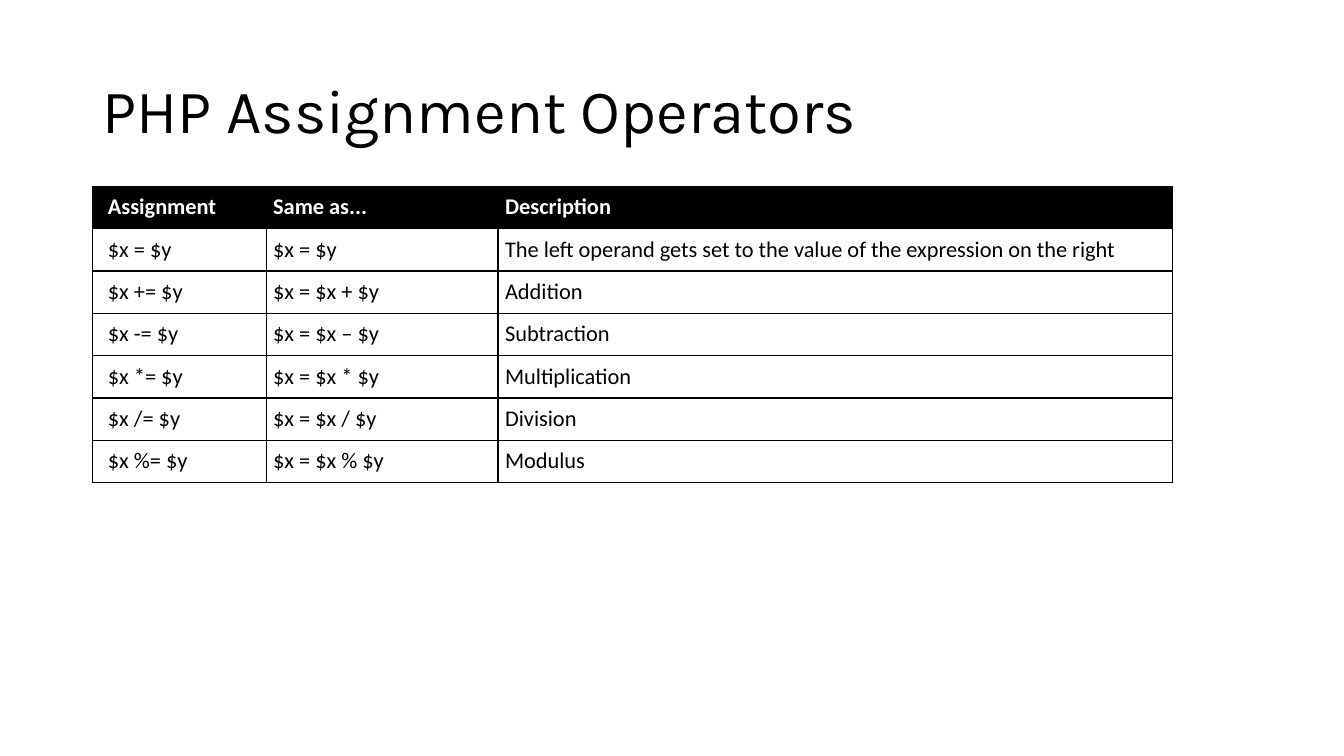
from dataclasses import dataclass

from lxml import etree
from pptx import Presentation
from pptx.dml.color import RGBColor
from pptx.enum import text
from pptx.oxml import ns
from pptx.util import Inches, Pt


@dataclass(frozen=True)
class Theme:
    """Colours, fonts and sizes of the slide."""
    black: str = "000000"
    white: str = "FFFFFF"
    title_font: str = "Karla"
    body_font: str = "Calibri"
    title_size: int = 44
    body_size: int = 16
    border: int = 1


THEME = Theme()
COLUMNS = (1.72, 2.3, 6.69)
OPERATORS = (
    ("Assignment", "Same as...", "Description"),
    ("$x = $y", "$x = $y", "The left operand gets set to the value of the expression on the right"),
    ("$x += $y", "$x = $x + $y", "Addition"),
    ("$x -= $y", "$x = $x – $y", "Subtraction"),
    ("$x *= $y", "$x = $x * $y", "Multiplication"),
    ("$x /= $y", "$x = $x / $y", "Division"),
    ("$x %= $y", "$x = $x % $y", "Modulus"),
)


def set_all(target, values):
    """Set each named attribute on the target."""
    for name, value in values.items():
        setattr(target, name, value)


def write(p, words, color, **font):
    """Add a formatted run to a paragraph."""
    r = p.add_run()
    r.text = words
    set_all(r.font, font)
    r.font.color.rgb = RGBColor.from_string(color)


def add_borders(cell):
    """Draw a thin line on all four sides of a cell."""
    props = cell._tc.get_or_add_tcPr()
    for i, side in enumerate(("lnL", "lnR", "lnT", "lnB")):
        line = etree.Element(ns.qn(f"a:{side}"), w=str(Pt(THEME.border)))
        fill = etree.SubElement(line, ns.qn("a:solidFill"))
        etree.SubElement(fill, ns.qn("a:srgbClr"), val=THEME.black)
        props.insert(i, line)


def add_title(s, words, left, top, width, height):
    """Place the slide title in the given box."""
    tf = s.shapes.add_textbox(*map(Inches, (left, top, width, height))).text_frame
    set_all(tf, {"word_wrap": True, "vertical_anchor": text.MSO_ANCHOR.MIDDLE})
    p = tf.paragraphs[0]
    p.line_spacing = 0.9
    write(p, words, THEME.black, name=THEME.title_font, size=Pt(THEME.title_size))


def fill_cell(cell, words, is_header, is_first):
    """Write and format one table cell."""
    margin = Inches(0.07)
    set_all(cell, {
        "margin_left": Inches(0.15) if is_first else margin,
        "margin_right": margin,
        "margin_top": margin,
        "margin_bottom": margin,
    })
    back, front = (THEME.black, THEME.white) if is_header else (THEME.white, THEME.black)
    cell.fill.solid()
    cell.fill.fore_color.rgb = RGBColor.from_string(back)
    write(cell.text_frame.paragraphs[0], words, front,
          name=THEME.body_font, size=Pt(THEME.body_size), bold=is_header)
    add_borders(cell)


def add_operators(s, rows, left, top, width, height):
    """Place the operator table in the given box."""
    box = map(Inches, (left, top, width, height))
    table = s.shapes.add_table(len(rows), len(COLUMNS), *box).table
    for column, share in zip(table.columns, COLUMNS):
        column.width = Inches(width * share / sum(COLUMNS))
    for i, row in enumerate(rows):
        for j, words in enumerate(row):
            fill_cell(table.cell(i, j), words, i == 0, j == 0)


def main():
    """Build and save the slide."""
    prs = Presentation()
    set_all(prs, {"slide_width": Inches(13.33), "slide_height": Inches(7.5)})
    s = prs.slides.add_slide(prs.slide_layouts[6])
    add_title(s, "PHP Assignment Operators", 0.92, 0.4, 11.5, 1.45)
    add_operators(s, OPERATORS, 0.92, 1.85, 10.71, 2.94)
    prs.save("out.pptx")


if __name__ == "__main__":
    main()
